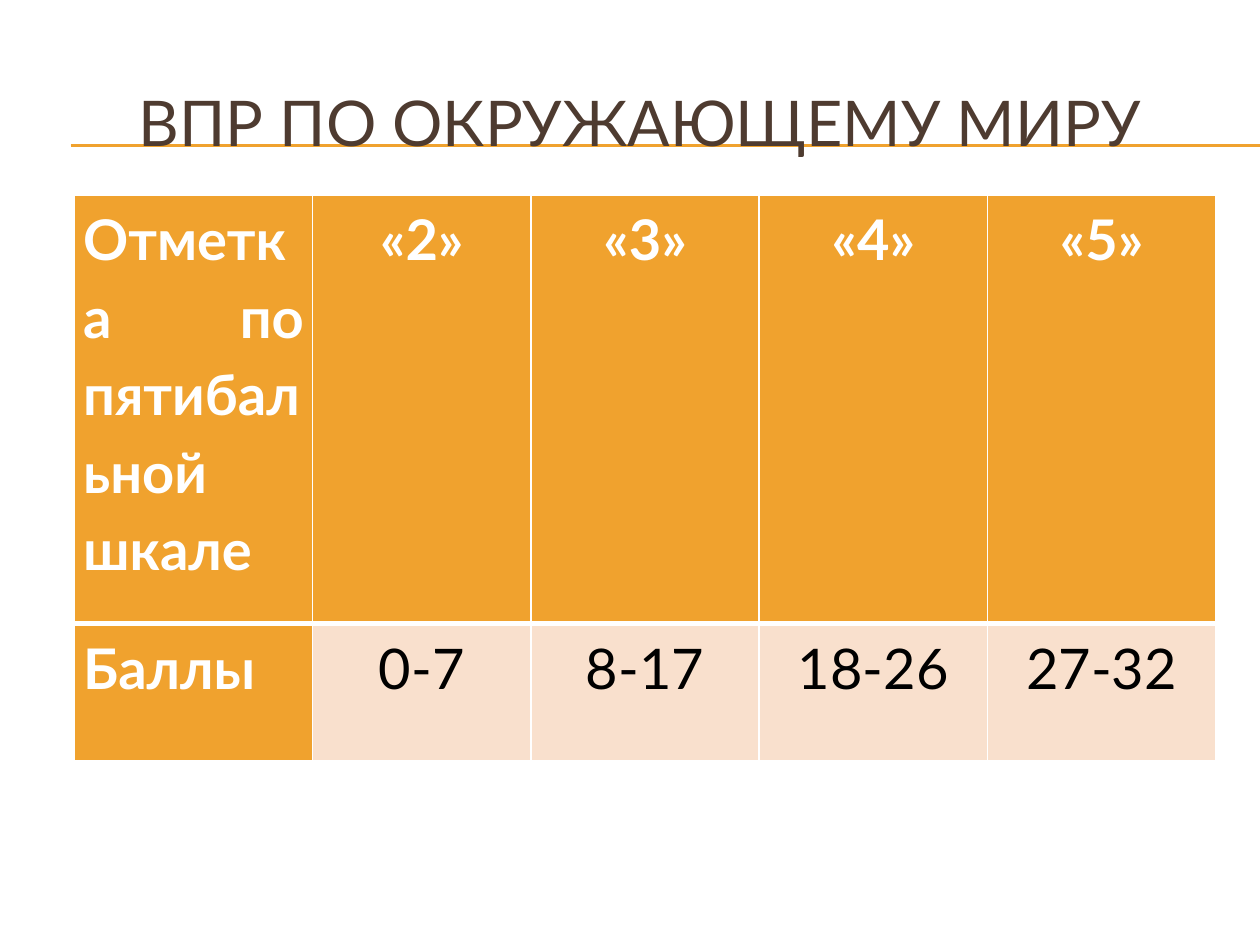
import pptx
import pptx.util
import pptx.dml.color
import pptx.enum.shapes
import pptx.enum.text
import pptx.oxml.ns
from lxml import etree

Inches = pptx.util.Inches
Pt = pptx.util.Pt
RGBColor = pptx.dml.color.RGBColor
ALIGN = pptx.enum.text.PP_ALIGN
ANCHOR = pptx.enum.text.MSO_ANCHOR
qn = pptx.oxml.ns.qn

GOLD = RGBColor(0xF0, 0xA2, 0x2E)
PEACH = RGBColor(0xF9, 0xE0, 0xCD)
BROWN = RGBColor(0x4E, 0x3B, 0x30)
WHITE = RGBColor(0xFF, 0xFF, 0xFF)
BLACK = RGBColor(0, 0, 0)
FONT = "Lato"

ROWS = [
    ["Отметка по пятибальной шкале", "«2»", "«3»", "«4»", "«5»"],
    ["Баллы", "0-7", "8-17", "18-26", "27-32"],
]
WIDTHS = [1.89, 1.73, 1.81, 1.81, 1.81]
HEIGHTS = [3.4, 1.09]


def style(para, size, color, align, bold=False):
    para.alignment = align
    para.font.name = FONT
    para.font.size = Pt(size)
    para.font.bold = bold
    para.font.color.rgb = color


def add_rule(slide, left, top, width):
    for y in (top, top + Inches(0.01)):
        line = slide.shapes.add_connector(
            pptx.enum.shapes.MSO_CONNECTOR.STRAIGHT, left, y, left + width, y)
        line.line.color.rgb = GOLD
        line.line.width = Pt(0.75)
        etree.SubElement(line._element.spPr, qn("a:effectLst"))


def add_title(slide, left, top, width, height):
    frame = slide.shapes.add_textbox(left, top, width, height).text_frame
    frame.word_wrap = True
    frame.vertical_anchor = ANCHOR.MIDDLE
    para = frame.paragraphs[0]
    para.text = "ВПР ПО ОКРУЖАЮЩЕМУ МИРУ"
    style(para, 36, BROWN, ALIGN.CENTER)


def set_border(cell, sides):
    props = cell._tc.get_or_add_tcPr()
    for spot, (side, width) in enumerate(sides.items()):
        edge = etree.Element(qn(f"a:ln{side}"), w=str(Pt(width)))
        fill = etree.SubElement(edge, qn("a:solidFill"))
        etree.SubElement(fill, qn("a:srgbClr"), val=str(WHITE))
        props.insert(spot, edge)


def fill_cell(cell, text, row, col):
    head = row == 0 or col == 0
    cell.fill.solid()
    cell.fill.fore_color.rgb = GOLD if head else PEACH
    cell.margin_left = cell.margin_right = Inches(0.07)
    cell.margin_top = cell.margin_bottom = 0
    para = cell.text_frame.paragraphs[0]
    para.text = text
    para.line_spacing = 1.15
    para.space_after = Pt(10)
    style(para, 32, WHITE if head else BLACK,
          ALIGN.CENTER if col else ALIGN.JUSTIFY, head)
    set_border(cell, {"L": 1, "R": 1, "T": 3 if row else 1, "B": 1 if row else 3})


def add_scores(slide, left, top, width, height):
    table = slide.shapes.add_table(
        len(ROWS), len(WIDTHS), left, top, width, height).table
    for col, size in zip(table.columns, WIDTHS):
        col.width = int(width * size / sum(WIDTHS))
    for row, size in zip(table.rows, HEIGHTS):
        row.height = int(height * size / sum(HEIGHTS))
    for r, texts in enumerate(ROWS):
        for c, text in enumerate(texts):
            fill_cell(table.cell(r, c), text, r, c)


def main():
    deck = pptx.Presentation()
    deck.slide_width = Inches(10)
    deck.slide_height = Inches(7.5)
    slide = deck.slides.add_slide(deck.slide_layouts[6])
    add_rule(slide, Inches(0.56), Inches(1.15), Inches(9.44))
    add_title(slide, Inches(0.33), Inches(0.5), Inches(9.5), Inches(0.92))
    add_scores(slide, Inches(0.59), Inches(1.55), Inches(9.06), Inches(4.49))
    deck.save("out.pptx")


if __name__ == "__main__":
    main()
